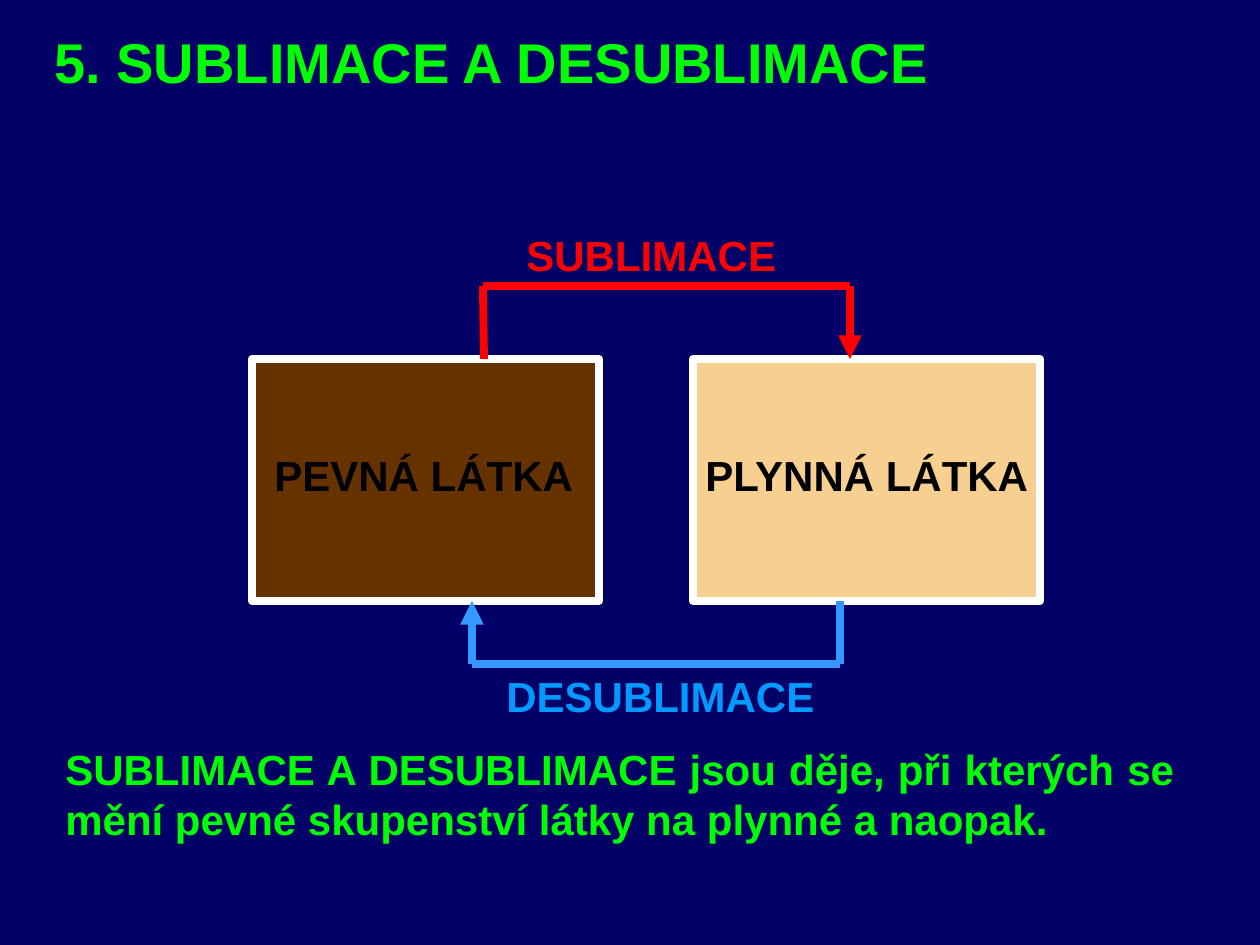
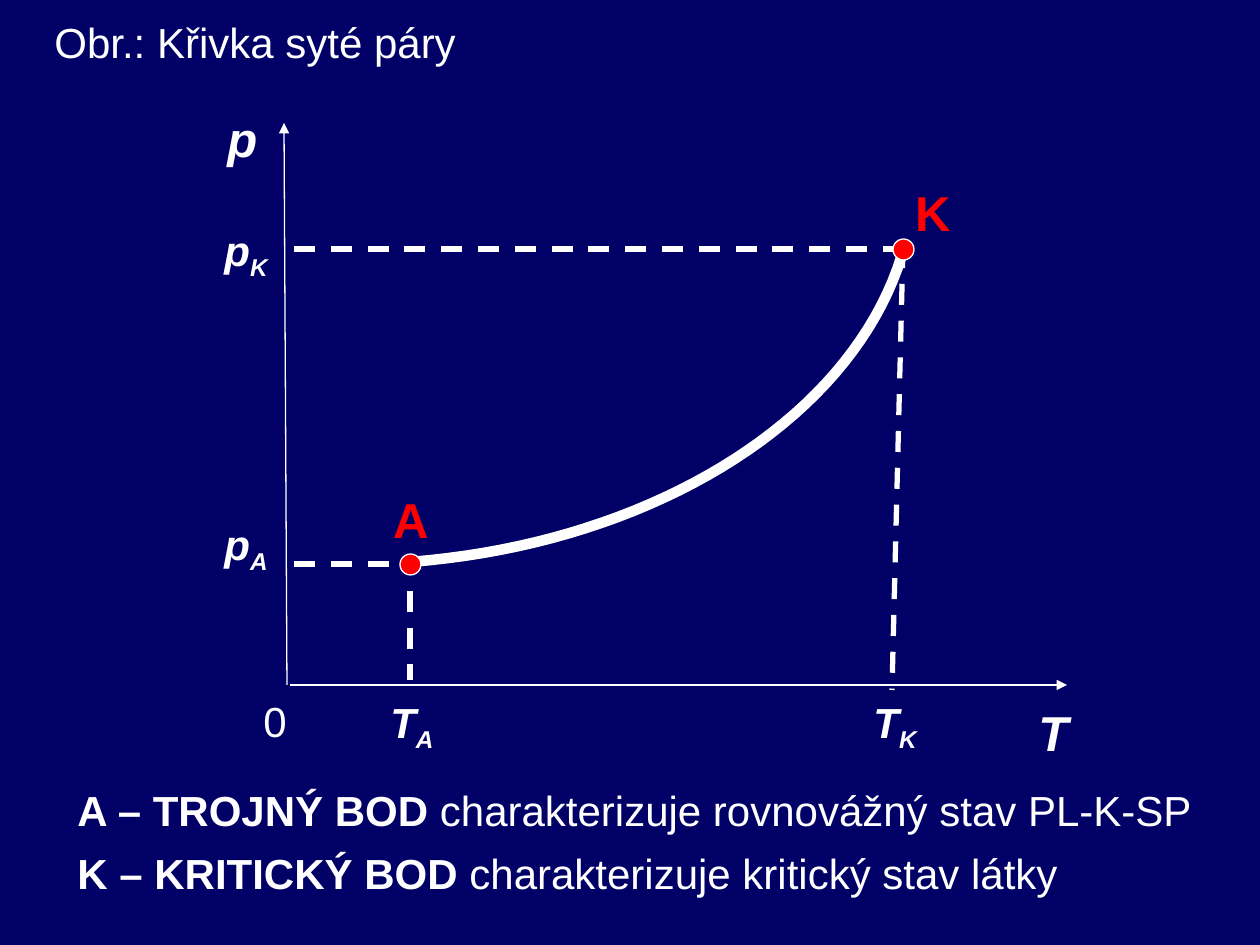
from dataclasses import dataclass
from itertools import pairwise

from lxml import etree
from pptx import Presentation
from pptx.dml.color import RGBColor
from pptx.enum.dml import MSO_LINE
from pptx.enum.shapes import MSO_CONNECTOR, MSO_SHAPE
from pptx.enum.text import MSO_AUTO_SIZE, PP_ALIGN
from pptx.oxml.ns import qn
from pptx.util import Emu, Inches, Pt

RECTANGLE = MSO_SHAPE.RECTANGLE
OVAL = MSO_SHAPE.OVAL
STRAIGHT = MSO_CONNECTOR.STRAIGHT
DASH = MSO_LINE.DASH
GROW = MSO_AUTO_SIZE.SHAPE_TO_FIT_TEXT
LEFT = PP_ALIGN.LEFT
JUSTIFY = PP_ALIGN.JUSTIFY

PX_PER_INCH = 126
SLIDE_WIDTH, SLIDE_HEIGHT = 1260, 945
FONT = "Arial"
COLORS = {
    "navy": "000066",
    "white": "FFFFFF",
    "black": "000000",
    "green": "00FF00",
    "red": "FF0000",
    "brown": "663300",
    "sand": "F7D091",
    "blue": "3399FF",
    "sky": "0099FF",
}

Point = tuple[int, int]


@dataclass(frozen=True)
class Label:
    """Text whose optional tail is a subscript or, failing that, not bold."""

    text: str
    left: int
    top: int
    width: int
    height: int = 63
    color: str = "white"
    size: int = 24
    bold: bool = True
    italic: bool = False
    tail: str = ""
    subscript: bool = False
    wrap: bool = True
    align: PP_ALIGN = LEFT
    margin: int = 0
    line_spacing: float = 1.0


@dataclass(frozen=True)
class Block:
    left: int
    top: int
    width: int
    height: int
    fill: str
    line_width: float
    kind: MSO_SHAPE = RECTANGLE


@dataclass(frozen=True)
class Route:
    """Straight segments through the points, with an arrowhead at the end if asked."""

    points: tuple[Point, ...]
    color: str = "white"
    width: float = 3
    dashed: bool = False
    arrow: bool = False


BOX_TOP, BOX_WIDTH, BOX_HEIGHT = 359, 347, 242
BOX_BOTTOM = BOX_TOP + BOX_HEIGHT
UPPER_TURN, LOWER_TURN = 286, 664

STATE_BOXES = [
    Block(left, BOX_TOP, BOX_WIDTH, BOX_HEIGHT, fill, 4.5)
    for left, fill in ((252, "brown"), (693, "sand"))
]
TRANSITIONS = [
    Route(((840, BOX_BOTTOM), (840, LOWER_TURN), (472, LOWER_TURN), (472, BOX_BOTTOM)),
          "blue", 4.5, arrow=True),
    Route(((484, BOX_TOP), (483, UPPER_TURN), (850, UPPER_TURN), (850, BOX_TOP)),
          "red", 4.5, arrow=True),
]
SUBLIMATION_LABELS = [
    Label("5. SUBLIMACE A DESUBLIMACE", 42, 21, 1166, 79, "green", 32),
    Label("PEVNÁ LÁTKA", 262, 443, 325, color="black"),
    Label("PLYNNÁ LÁTKA", 693, 443, 451, color="black"),
    Label("DESUBLIMACE", 494, LOWER_TURN, 334, color="sky", wrap=False),
    Label("SUBLIMACE", 514, 223, 305, color="red"),
    Label("SUBLIMACE A DESUBLIMACE jsou děje, při kterých se mění pevné "
          "skupenství látky na plynné a naopak.",
          0, 737, 1187, 113, "green", align=JUSTIFY, margin=53),
]

TRIPLE_POINT = (410, 564)
CRITICAL_POINT = (903, 249)
DOT_SIZE = 21
AXES = [
    Route(((287, 685), (284, 123)), width=0.75, arrow=True),
    Route(((290, 685), (1067, 685)), width=0.75, arrow=True),
]
GUIDES = [
    Route(ends, dashed=True)
    for ends in (
        ((294, 249), CRITICAL_POINT),
        ((903, 247), (892, 690)),
        ((410, 554), (410, 680)),
        ((294, 564), (399, 564)),
    )
]
VAPOUR_CURVE = ((410, 562), (659, 543), (861, 413), (905, 244))
CURVE_STEPS = 40
POINT_DOTS = [
    Block(x - DOT_SIZE // 2, y - DOT_SIZE // 2, DOT_SIZE, DOT_SIZE, "red", 0.75, OVAL)
    for x, y in (CRITICAL_POINT, TRIPLE_POINT)
]
COORDINATE_LABELS = [
    Label(quantity, left, top, 166, italic=True, tail=point, subscript=True)
    for quantity, point, left, top in (
        ("p", "A", 212, 512),
        ("p", "K", 212, 218),
        ("T", "K", 861, 690),
        ("T", "A", 378, 690),
    )
]
CURVE_LABELS = COORDINATE_LABELS + [
    Label("Obr.: Křivka syté páry", 42, 10, 1113, bold=False, align=JUSTIFY),
    Label("p", 215, 102, 55, 72, size=28, italic=True, wrap=False),
    Label("T", 1026, 696, 55, 72, size=28, italic=True, wrap=False),
    Label("0", 251, 689, 49, bold=False, wrap=False),
    Label("K", 903, 176, 60, 72, "red", 28, wrap=False),
    Label("A", 381, 483, 60, 72, "red", 28, wrap=False),
    Label("A – TROJNÝ BOD ", 42, 788, 1218, 53, align=JUSTIFY, margin=23, line_spacing=0.8,
          tail="charakterizuje rovnovážný stav PL-K-SP"),
    Label("K – KRITICKÝ BOD ", 42, 851, 1207, 53, align=JUSTIFY, margin=23, line_spacing=0.8,
          tail="charakterizuje kritický stav látky"),
]


def px(length: float) -> Emu:
    return Emu(round(length * Inches(1) / PX_PER_INCH))


def rgb(name: str) -> RGBColor:
    return RGBColor.from_string(COLORS[name])


def add_slide(presentation):
    slide = presentation.slides.add_slide(presentation.slide_layouts[6])
    slide.background.fill.solid()
    slide.background.fill.fore_color.rgb = rgb("navy")
    return slide


def style_line(line, color: str, width: float) -> None:
    line.color.rgb = rgb(color)
    line.width = Pt(width)


def draw_label(slide, label: Label) -> None:
    box = slide.shapes.add_textbox(
        px(label.left), px(label.top), px(label.width), px(label.height))
    frame = box.text_frame
    frame.word_wrap = label.wrap
    frame.auto_size = GROW
    frame.text = label.text
    paragraph = frame.paragraphs[0]
    paragraph.alignment = label.align
    paragraph.line_spacing = label.line_spacing
    if label.margin:
        paragraph._p.get_or_add_pPr().set("marL", str(px(label.margin)))
    if label.tail:
        paragraph.add_run().text = label.tail
    for run in paragraph.runs:
        run.font.name = FONT
        run.font.size = Pt(label.size)
        run.font.bold = label.bold
        run.font.italic = label.italic
        run.font.color.rgb = rgb(label.color)
    if label.subscript:
        run.font._element.set("baseline", "-25000")
    elif label.tail:
        run.font.bold = False


def draw_block(slide, block: Block) -> None:
    shape = slide.shapes.add_shape(
        block.kind, px(block.left), px(block.top), px(block.width), px(block.height))
    shape.shadow.inherit = False
    shape.fill.solid()
    shape.fill.fore_color.rgb = rgb(block.fill)
    style_line(shape.line, "white", block.line_width)


def draw_route(slide, route: Route) -> None:
    for (start_x, start_y), (end_x, end_y) in pairwise(route.points):
        connector = slide.shapes.add_connector(
            STRAIGHT, px(start_x), px(start_y), px(end_x), px(end_y))
        style_line(connector.line, route.color, route.width)
        if route.dashed:
            connector.line.dash_style = DASH
        etree.SubElement(connector._element.spPr, qn("a:effectLst"))
    if route.arrow:
        line = connector.line._get_or_add_ln()
        etree.SubElement(line, qn("a:tailEnd"), type="triangle")


def bezier_point(controls: tuple[Point, ...], position: float) -> tuple[Emu, Emu]:
    rest = 1 - position
    weights = (rest**3, 3 * rest**2 * position, 3 * rest * position**2, position**3)
    x, y = (sum(w * value for w, value in zip(weights, axis)) for axis in zip(*controls))
    return px(x), px(y)


def draw_curve(slide, controls: tuple[Point, ...]) -> None:
    start, *others = [
        bezier_point(controls, step / CURVE_STEPS) for step in range(CURVE_STEPS + 1)]
    builder = slide.shapes.build_freeform(*start)
    builder.add_line_segments(others, close=False)
    curve = builder.convert_to_shape()
    curve.shadow.inherit = False
    curve.fill.background()
    style_line(curve.line, "white", 6)


def build_sublimation_slide(presentation) -> None:
    slide = add_slide(presentation)
    for block in STATE_BOXES:
        draw_block(slide, block)
    for route in TRANSITIONS:
        draw_route(slide, route)
    for label in SUBLIMATION_LABELS:
        draw_label(slide, label)


def build_vapour_curve_slide(presentation) -> None:
    slide = add_slide(presentation)
    for route in AXES + GUIDES:
        draw_route(slide, route)
    draw_curve(slide, VAPOUR_CURVE)
    for dot in POINT_DOTS:
        draw_block(slide, dot)
    for label in CURVE_LABELS:
        draw_label(slide, label)


def main() -> None:
    presentation = Presentation()
    presentation.slide_width = px(SLIDE_WIDTH)
    presentation.slide_height = px(SLIDE_HEIGHT)
    build_sublimation_slide(presentation)
    build_vapour_curve_slide(presentation)
    presentation.save("out.pptx")


if __name__ == "__main__":
    main()
